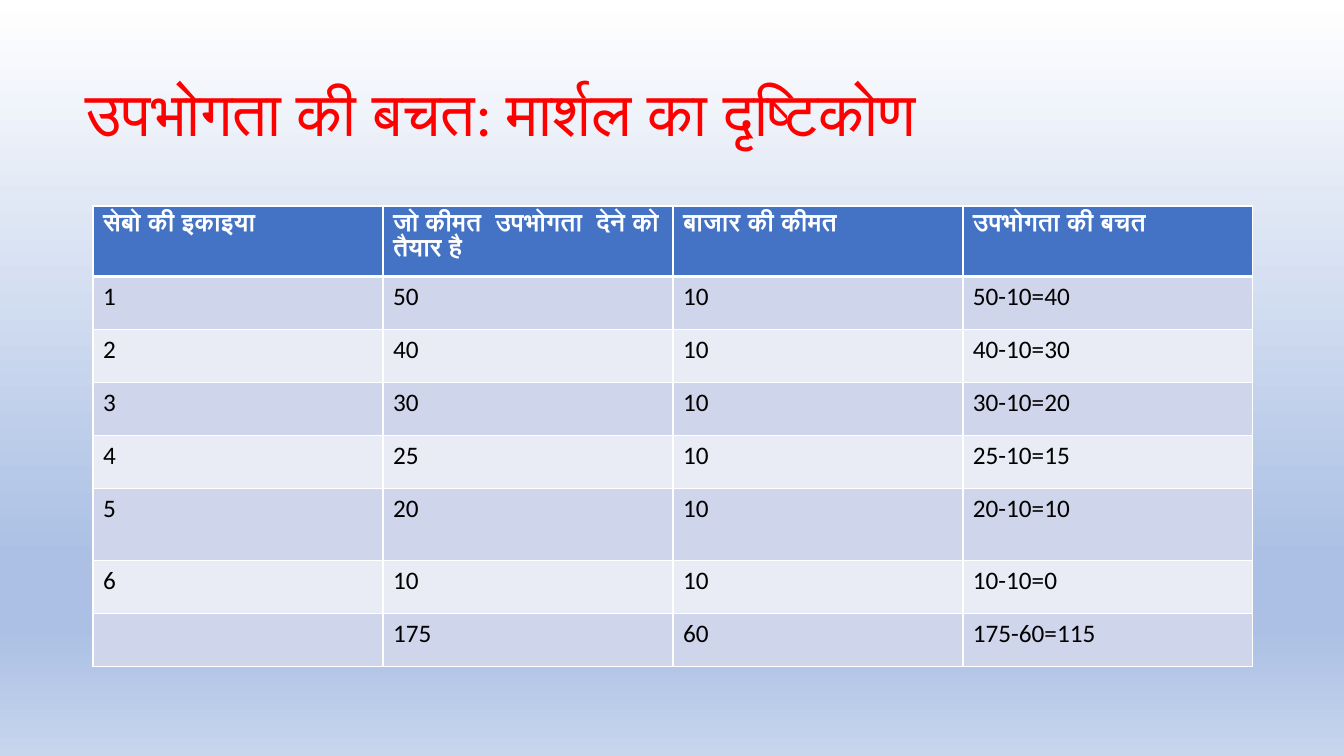
import pptx
import pptx.util
import pptx.dml.color
import pptx.enum.text
import pptx.oxml
import pptx.oxml.ns
from lxml import etree

SCALE = 914400 / 100.8
HUES = {"white": "FFFFFF", "sky": "ABC0E4", "mist": "C7D5ED", "red": "FF0000",
        "head": "4472C4", "odd": "CFD5EA", "even": "E9EBF5", "black": "000000"}
HEADS = ["सेबो की इकाइया", "जो कीमत  उपभोगता  देने को तैयार है",
         "बाजार की कीमत", "उपभोगता की बचत"]
PRICES = [50, 40, 30, 25, 20, 10]
COST = 10


def px(n):
    return pptx.util.Emu(round(n * SCALE))


def rgb(hue):
    return pptx.dml.color.RGBColor.from_string(HUES[hue])


def add(parent, tag, **attrs):
    return etree.SubElement(parent, pptx.oxml.ns.qn(tag), attrs)


class Deck:
    """Hold the style and the current slide."""

    def __init__(self, wide, high, font):
        self.prs = pptx.Presentation()
        self.prs.slide_width, self.prs.slide_height = px(wide), px(high)
        self.slide = self.prs.slides.add_slide(self.prs.slide_layouts[6])
        self.font = font

    def back(self, stops):
        fill = self.slide.background.fill
        fill.gradient()
        fill.gradient_angle = 270
        group = next(self.slide.element.iter(pptx.oxml.ns.qn("a:gsLst")))
        for stop in list(group):
            group.remove(stop)
        for part, hue in stops:
            stop = add(group, "a:gs", pos=str(part * 1000))
            add(stop, "a:srgbClr", val=HUES[hue])

    def style(self, frame, size, hue, bold=False):
        for run in frame.paragraphs[0].runs:
            run.font.name = self.font
            run.font.size = pptx.util.Pt(size)
            run.font.bold = bold
            run.font.color.rgb = rgb(hue)

    def title(self, text, x, y, w, h):
        frame = self.slide.shapes.add_textbox(px(x), px(y), px(w), px(h)).text_frame
        frame.word_wrap = True
        frame.vertical_anchor = pptx.enum.text.MSO_ANCHOR.MIDDLE
        frame.text = text
        frame.paragraphs[0].line_spacing = 0.9
        self.style(frame, 44, "red")

    def edge(self, cell, side, width):
        props = cell._tc.get_or_add_tcPr()
        line = add(props, "a:" + side, w=str(pptx.util.Pt(width)))
        add(add(line, "a:solidFill"), "a:srgbClr", val=HUES["white"])

    def table(self, rows, x, y, wide, highs):
        cols = len(rows[0])
        grid = self.slide.shapes.add_table(
            len(rows), cols, px(x), px(y), px(wide * cols), px(sum(highs))).table
        grid.horz_banding = False
        for col in grid.columns:
            col.width = px(wide)
        for r, (row, high) in enumerate(zip(rows, highs)):
            grid.rows[r].height = px(high)
            top = r == 0
            fill = "head" if top else "odd" if r % 2 else "even"
            for c, text in enumerate(row):
                cell = grid.cell(r, c)
                cell.text_frame.text = str(text)
                self.style(cell.text_frame, 18, "white" if top else "black", top)
                for side in ("lnL", "lnR", "lnT", "lnB"):
                    thick = (r, side) in ((0, "lnB"), (1, "lnT"))
                    self.edge(cell, side, 3 if thick else 1)
                cell.fill.solid()
                cell.fill.fore_color.rgb = rgb(fill)


def main():
    deck = Deck(1344, 756, "Calibri")
    deck.back([(0, "white"), (74, "sky"), (83, "sky"), (100, "mist")])
    deck.title("उपभोगता की बचत: मार्शल का दृष्टिकोण", 76, 43, 1200, 146)
    rows = [HEADS]
    for unit, price in enumerate(PRICES, 1):
        rows.append([unit, price, COST, f"{price}-{COST}={price - COST}"])
    total, paid = sum(PRICES), COST * len(PRICES)
    rows.append(["", total, paid, f"{total}-{paid}={total - paid}"])
    deck.table(rows, 93, 206, 290, [60] + [53] * 4 + [72] + [53] * 2)
    deck.prs.save("out.pptx")


if __name__ == "__main__":
    main()
